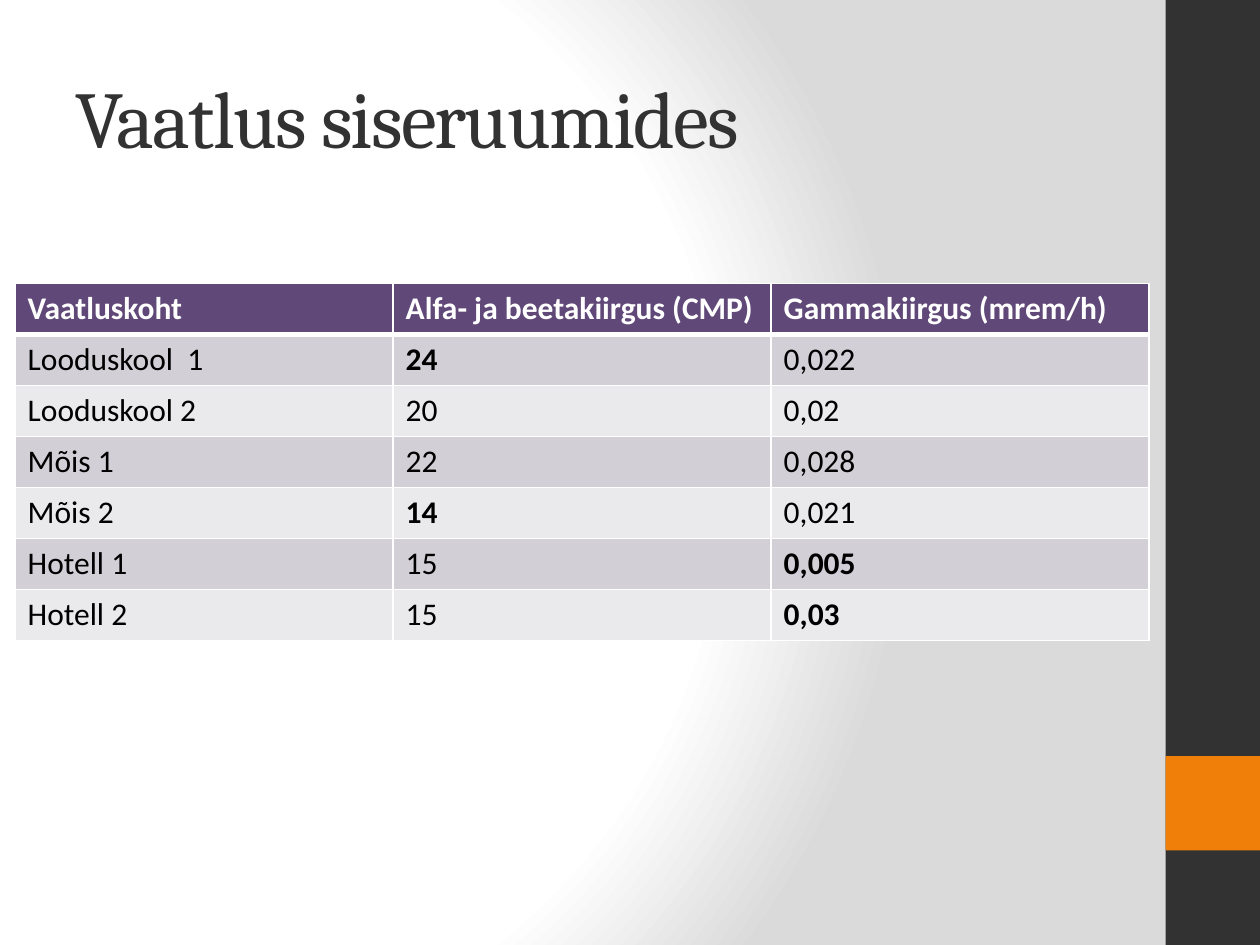
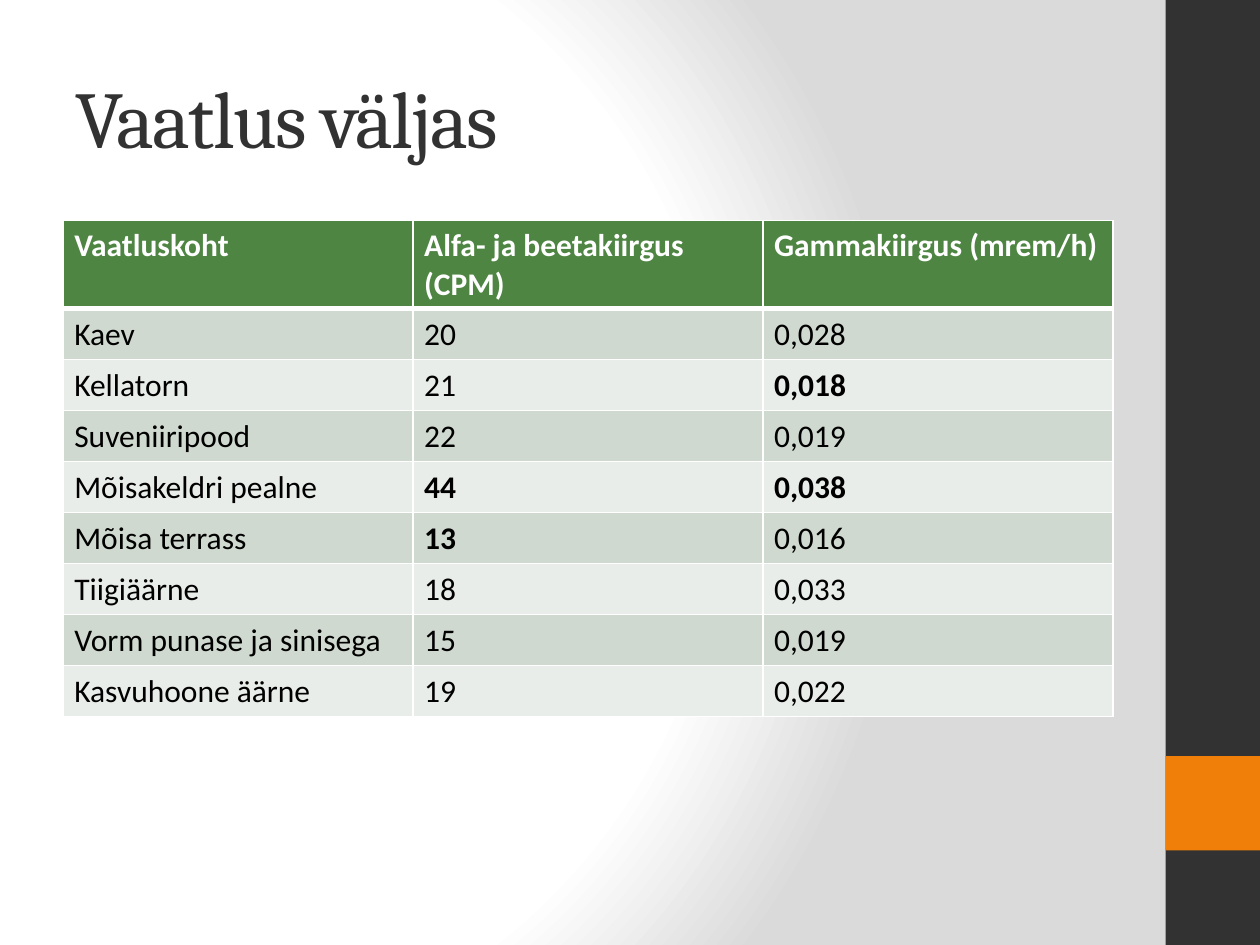
from lxml import etree
from pptx import Presentation
from pptx.dml.color import RGBColor
from pptx.enum.shapes import MSO_SHAPE
from pptx.enum.text import MSO_ANCHOR
from pptx.oxml import parse_xml
from pptx.util import Inches, Pt

RECT = MSO_SHAPE.RECTANGLE
MIDDLE = MSO_ANCHOR.MIDDLE
NS = "http://schemas.openxmlformats.org/drawingml/2006/main"

HEX = {
    "white": "FFFFFF", "grey": "DADADA", "dark": "323232",
    "orange": "F07F09", "black": "000000",
    "violet": ("604878", "D2CFD6", "EAE9EC"),  # head, odd rows, even rows
    "green": ("4E8542", "D0D9CF", "E9EDE9"),
}

# Grid of 40 columns by 30 rows
prs = Presentation()
prs.slide_width, prs.slide_height = Inches(10), Inches(7.5)
UNIT = prs.slide_width / 40
ROW = 1.62


def grid(*spans):
    return [round(span * UNIT) for span in spans]


def write(frame, text, font, size, color, bold=False):
    run = frame.paragraphs[0].add_run()
    run.text = text
    run.font.name, run.font.size, run.font.bold = font, Pt(size), bold
    run.font.color.rgb = RGBColor.from_string(color)
    return run


# Shared background: round gradient on the master
fill = prs.slide_master.background.fill
fill.gradient()
back = prs.slide_master.element.find(f".//{{{NS}}}gradFill")
stops = "".join(
    f'<a:gs pos="{pos}000"><a:srgbClr val="{HEX[name]}"/></a:gs>'
    for pos, name in ((0, "white"), (75, "white"), (100, "grey")))
back.getparent().replace(back, parse_xml(
    f'<a:gradFill xmlns:a="{NS}" rotWithShape="1"><a:gsLst>{stops}</a:gsLst>'
    '<a:path path="circle"><a:fillToRect l="20000" t="50000" r="100000" b="50000"/>'
    '</a:path></a:gradFill>'))

# Side bands: place and colour
BANDS = [((37, 0, 3, 30), "dark"), ((37, 24, 3, 3), "orange")]

# Title, table place, side margin, colours, rows; * marks a bold value
PAGES = [
    ("Vaatlus siseruumides", (0.48, 9, 36, 11.36), 0.1, "violet", [
        ("Vaatluskoht", "Alfa- ja beetakiirgus (CMP)", "Gammakiirgus (mrem/h)"),
        ("Looduskool  1", "*24", "0,022"),
        ("Looduskool 2", "20", "0,02"),
        ("Mõis 1", "22", "0,028"),
        ("Mõis 2", "*14", "0,021"),
        ("Hotell 1", "15", "*0,005"),
        ("Hotell 2", "15", "*0,03"),
    ]),
    ("Vaatlus väljas", (2, 7, 33.33, 15.76), 0.09, "green", [
        ("Vaatluskoht", "Alfa- ja beetakiirgus (CPM)", "Gammakiirgus (mrem/h)"),
        ("Kaev", "20", "0,028"),
        ("Kellatorn", "21", "*0,018"),
        ("Suveniiripood", "22", "0,019"),
        ("Mõisakeldri pealne", "*44", "*0,038"),
        ("Mõisa terrass", "*13", "0,016"),
        ("Tiigiäärne", "18", "0,033"),
        ("Vorm punase ja sinisega", "15", "0,019"),
        ("Kasvuhoone äärne", "19", "0,022"),
    ]),
]

for title, place, side, tone, rows in PAGES:
    slide = prs.slides.add_slide(prs.slide_layouts[6])

    # Bands
    for spot, name in BANDS:
        band = slide.shapes.add_shape(RECT, *grid(*spot))
        band.shadow.inherit = False
        band.fill.solid()
        band.fill.fore_color.rgb = RGBColor.from_string(HEX[name])
        band.line.fill.background()

    # Title
    frame = slide.shapes.add_textbox(*grid(2, 1.2, 33.33, 5)).text_frame
    frame.word_wrap = True
    frame.vertical_anchor = MIDDLE
    run = write(frame, title, "Cambria", 46, HEX["dark"])
    run.font._element.set("spc", "-100")

    # Table
    holder = slide.shapes.add_table(len(rows), len(rows[0]), *grid(*place))
    table = holder.table
    table.first_row = table.horz_banding = False
    for line in table.rows:
        line.height = grid(ROW)[0]
    holder.height = grid(place[3])[0]
    head, odd, even = HEX[tone]

    for r, row in enumerate(rows):
        shade = head if r == 0 else odd if r % 2 else even
        ink = HEX["black"] if r else HEX["white"]
        for c, text in enumerate(row):
            cell = table.cell(r, c)
            cell.margin_left = cell.margin_right = Inches(side)
            cell.fill.solid()
            cell.fill.fore_color.rgb = RGBColor.from_string(shade)
            write(cell.text_frame, text.lstrip("*"), "Calibri", 18, ink,
                  r == 0 or text.startswith("*"))

            # White borders, thick below the head
            props = cell._tc.get_or_add_tcPr()
            for i, edge in enumerate("LRTB"):
                thick = (r, edge) in ((0, "B"), (1, "T"))
                ln = etree.Element(f"{{{NS}}}ln{edge}", w=str(Pt(3 if thick else 1)))
                solid = etree.SubElement(ln, f"{{{NS}}}solidFill")
                etree.SubElement(solid, f"{{{NS}}}srgbClr", val=HEX["white"])
                props.insert(i, ln)

prs.save("out.pptx")
